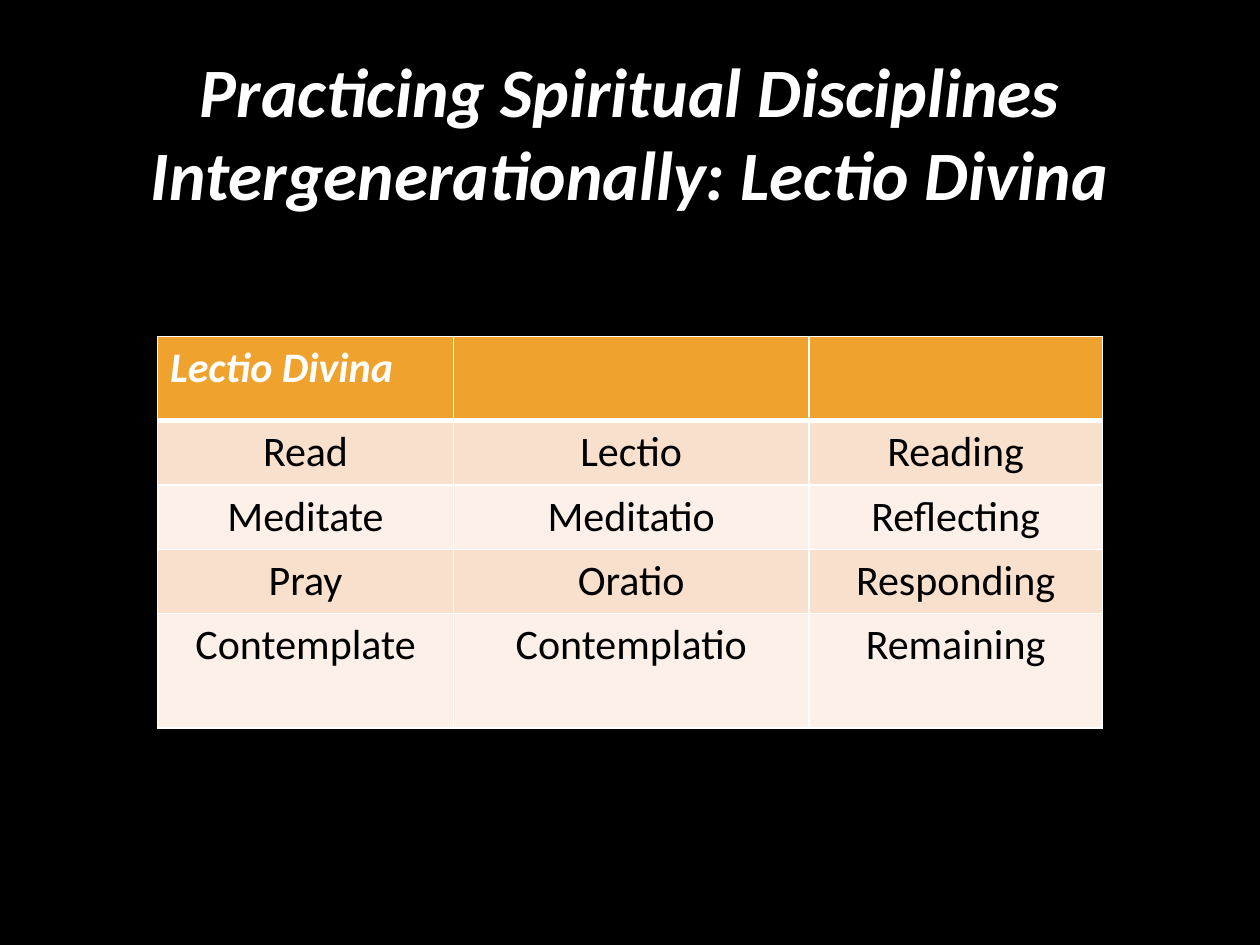
from lxml.etree import SubElement
from pptx import Presentation
from pptx.dml.color import RGBColor
from pptx.enum.text import MSO_ANCHOR, PP_ALIGN
from pptx.oxml.ns import qn
from pptx.util import Inches, Pt

BLACK = RGBColor(0x00, 0x00, 0x00)
WHITE = RGBColor(0xFF, 0xFF, 0xFF)
ORANGE = RGBColor(0xF0, 0xA2, 0x2E)
PEACH = RGBColor(0xF9, 0xE0, 0xCD)
CREAM = RGBColor(0xFC, 0xF0, 0xE8)

TITLE = "Practicing Spiritual Disciplines Intergenerationally: Lectio Divina"
ROWS = [
    ("Lectio Divina", "", ""),
    ("Read", "Lectio", "Reading"),
    ("Meditate", "Meditatio", "Reflecting"),
    ("Pray", "Oratio", "Responding"),
    ("Contemplate", "Contemplatio", "Remaining"),
]
COLUMN_WIDTHS = [2.35, 2.82, 2.33]
ROW_HEIGHTS = [0.67, 0.51, 0.51, 0.51, 0.91]

TITLE_FORMAT = {"name": "Calibri", "size": Pt(39.6), "bold": True, "italic": True}
HEADER_FORMAT = {"name": "Calibri", "size": Pt(24), "bold": True, "italic": True}
BODY_FORMAT = {"name": "Calibri", "size": Pt(24), "bold": False, "italic": False}


def write(paragraph, text, text_format, color, alignment):
    paragraph.alignment = alignment
    span = paragraph.add_run()
    span.text = text
    for name, value in text_format.items():
        setattr(span.font, name, value)
    span.font.color.rgb = color


def add_title(page):
    box = page.shapes.add_textbox(Inches(0.75), Inches(0.5), Inches(8.5), Inches(1.08))
    frame = box.text_frame
    frame.word_wrap = True
    frame.vertical_anchor = MSO_ANCHOR.MIDDLE
    write(frame.paragraphs[0], TITLE, TITLE_FORMAT, WHITE, PP_ALIGN.CENTER)


def set_borders(cell, widths):
    """Draw white borders; widths maps an edge tag to points."""
    properties = cell._tc.get_or_add_tcPr()
    for position, (edge, width) in enumerate(widths.items()):
        line = properties.makeelement(qn(f"a:{edge}"), {"w": str(Pt(width))})
        fill = SubElement(line, qn("a:solidFill"))
        SubElement(fill, qn("a:srgbClr"), {"val": str(WHITE)})
        properties.insert(position, line)


def add_practice_table(page):
    frame = page.shapes.add_table(
        len(ROWS), len(COLUMN_WIDTHS), Inches(1.25), Inches(2.67),
        Inches(sum(COLUMN_WIDTHS)), Inches(sum(ROW_HEIGHTS)))
    table = frame.table
    for column, width in zip(table.columns, COLUMN_WIDTHS):
        column.width = Inches(width)
    for row, height in zip(table.rows, ROW_HEIGHTS):
        row.height = Inches(height)
    for row_index, texts in enumerate(ROWS):
        if row_index == 0:
            fill, style = ORANGE, (HEADER_FORMAT, WHITE, PP_ALIGN.LEFT)
        else:
            fill = PEACH if row_index % 2 else CREAM
            style = (BODY_FORMAT, BLACK, PP_ALIGN.CENTER)
        borders = {"lnL": 1, "lnR": 1,
                   "lnT": 3 if row_index == 1 else 1,
                   "lnB": 3 if row_index == 0 else 1}
        for column_index, text in enumerate(texts):
            cell = table.cell(row_index, column_index)
            cell.fill.solid()
            cell.fill.fore_color.rgb = fill
            set_borders(cell, borders)
            if text:
                write(cell.text_frame.paragraphs[0], text, *style)


def main():
    deck = Presentation()
    deck.slide_width, deck.slide_height = Inches(10), Inches(7.5)
    page = deck.slides.add_slide(deck.slide_layouts[6])
    page.background.fill.solid()
    page.background.fill.fore_color.rgb = BLACK
    add_title(page)
    add_practice_table(page)
    deck.save("out.pptx")


if __name__ == "__main__":
    main()
